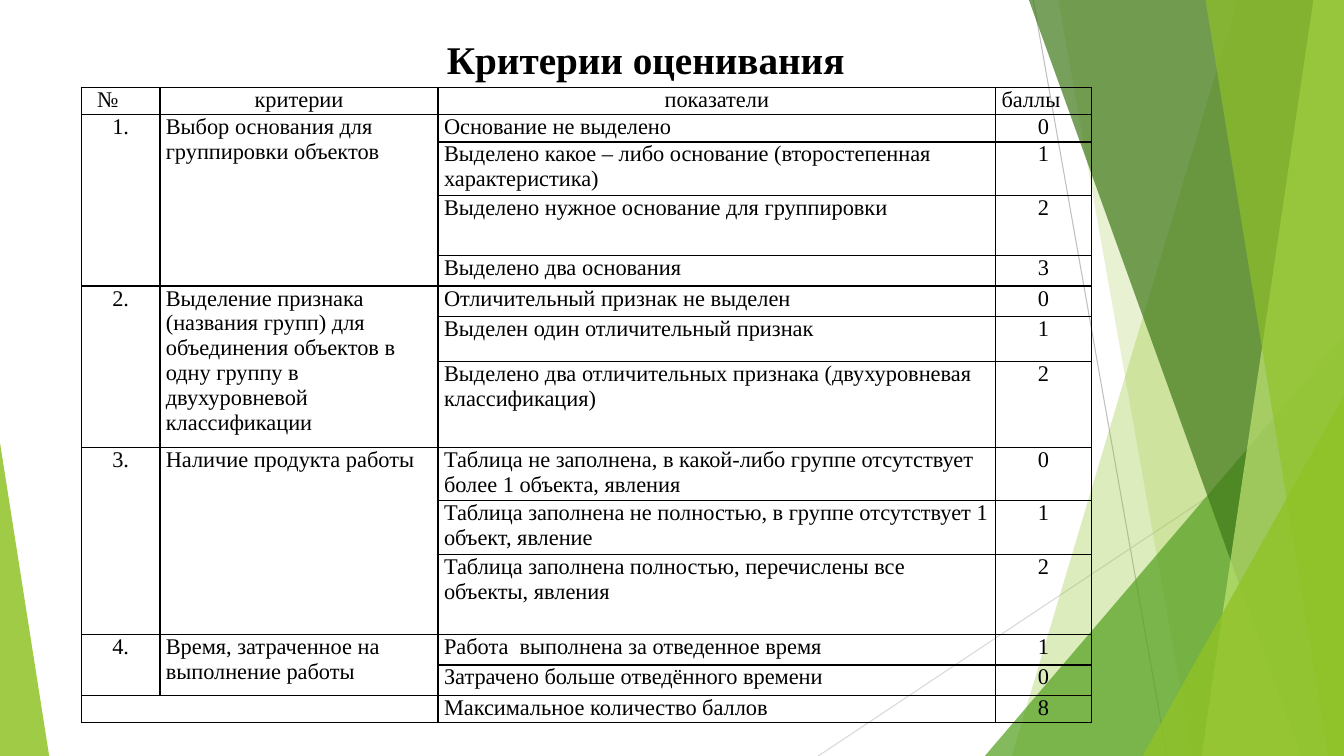
from lxml import etree
from pptx import Presentation
from pptx import util as u
from pptx.dml.color import RGBColor
from pptx.enum import shapes, text
from pptx.oxml.ns import qn

# Content
TITLE = "Критерии оценивания"
HEADERS = ["№", "критерии", "показатели", "баллы"]
# Criterion, then its indicators: wording, points, row height in cm
CRITERIA = [
    ("Выбор основания для группировки объектов", [
        ("Основание не выделено", 0, 0.69),
        ("Выделено какое – либо основание (второстепенная характеристика)", 1, 1.35),
        ("Выделено нужное основание для группировки", 2, 1.52),
        ("Выделено два основания", 3, 0.76),
    ]),
    ("Выделение признака  (названия групп) для объединения объектов в одну "
     "группу в двухуровневой классификации", [
        ("Отличительный признак не выделен", 0, 0.76),
        ("Выделен один отличительный признак", 1, 1.14),
        ("Выделено два отличительных признака (двухуровневая классификация)", 2, 2.16),
    ]),
    ("Наличие продукта работы", [
        ("Таблица не заполнена, в какой-либо группе отсутствует более 1 объекта, явления", 0, 1.35),
        ("Таблица заполнена не полностью, в группе отсутствует 1 объект, явление", 1, 1.35),
        ("Таблица заполнена полностью, перечислены все объекты, явления", 2, 2.03),
    ]),
    ("Время, затраченное на выполнение работы", [
        ("Работа  выполнена за отведенное время", 1, 0.76),
        ("Затрачено больше отведённого времени", 0, 0.76),
    ]),
]
TOTAL = ("Максимальное количество баллов", 8)

# Look
FONT = "Times New Roman"
BLACK = RGBColor(0x00, 0x00, 0x00)
GREEN = RGBColor(0x90, 0xC2, 0x26)
LEAF = RGBColor(0x54, 0xA0, 0x21)
FOREST = RGBColor(0x3F, 0x78, 0x19)
LIME = RGBColor(0xC0, 0xE4, 0x74)
GREY = RGBColor(0xBF, 0xBF, 0xBF)
PALE = RGBColor(0xD9, 0xD9, 0xD9)

# Geometry in cm
WIDTH, HEIGHT = 33.87, 19.05
COLUMNS = [1.98, 7.01, 14.05, 2.41]
PLAIN_ROW = 0.69
RAYS = [((26.04, 0), (29.41, HEIGHT), GREY), ((WIDTH, 10.24), (20.62, HEIGHT), PALE)]
# Back to front: a panel has its left edge's top and bottom x,
# a triangle has its box and the place of its apex
DECOR = [
    ("panel", (31.19, 25.5), GREEN, 30),
    ("panel", (26.67, 30.05), GREEN, 20),
    ("triangle", (24.82, 8.46, 9.05, 10.59, 1), LEAF, 72),
    ("panel", (25.93, 32.79), FOREST, 70),
    ("panel", (33.1, 30.28), LIME, 70),
    ("panel", (30.38, 33.48), GREEN, 65),
    ("triangle", (28.8, 9.98, 5.07, 9.07, 1), GREEN, 80),
    ("triangle", (0, 11.15, 1.24, 7.9, 0), GREEN, 85),
]


def add_ray(page, start, end, color):
    ray = page.shapes.add_connector(
        shapes.MSO_CONNECTOR.STRAIGHT, *(u.Cm(v) for v in start + end))
    ray.line.color.rgb = color
    ray.line.width = u.Pt(0.75)
    etree.SubElement(ray._element.spPr, qn("a:effectLst"))


def add_decor(page, kind, place, color, opacity):
    if kind == "panel":
        top, bottom = place
        builder = page.shapes.build_freeform(u.Cm(top), 0)
        builder.add_line_segments(
            [(u.Cm(x), u.Cm(y)) for x, y in
             [(WIDTH, 0), (WIDTH, HEIGHT), (bottom, HEIGHT)]], close=True)
        shape = builder.convert_to_shape()
    else:
        *box, apex = place
        shape = page.shapes.add_shape(
            shapes.MSO_SHAPE.ISOSCELES_TRIANGLE, *(u.Cm(v) for v in box))
        shape.adjustments[0] = apex
    shape.shadow.inherit = False
    shape.line.fill.background()
    shape.fill.solid()
    shape.fill.fore_color.rgb = color
    tint = shape.fill._xPr.find(qn("a:solidFill"))[0]
    etree.SubElement(tint, qn("a:alpha"), val=str(opacity * 1000))


def set_font(para, size, bold=False):
    para.font.name = FONT
    para.font.size = u.Pt(size)
    para.font.bold = bold
    para.font.color.rgb = BLACK


def format_cell(cell):
    cell.margin_left = cell.margin_right = u.Cm(0.15)
    cell.margin_top = cell.margin_bottom = 0
    properties = cell._tc.get_or_add_tcPr()
    for side in ("lnL", "lnR", "lnT", "lnB"):
        border = etree.SubElement(properties, qn("a:" + side), w=str(u.Pt(1)))
        fill = etree.SubElement(border, qn("a:solidFill"))
        etree.SubElement(fill, qn("a:srgbClr"), val=str(BLACK))
    cell.fill.background()
    set_font(cell.text_frame.paragraphs[0], 16)


def write(cell, wording, centered=False):
    para = cell.text_frame.paragraphs[0]
    para.add_run().text = str(wording)
    if centered:
        para.alignment = text.PP_ALIGN.CENTER


def add_criteria_table(page):
    heights = [PLAIN_ROW]
    heights += [height for _, indicators in CRITERIA for _, _, height in indicators]
    heights.append(PLAIN_ROW)
    frame = page.shapes.add_table(
        len(heights), len(COLUMNS), u.Cm(2.05), u.Cm(2.2),
        u.Cm(sum(COLUMNS)), u.Cm(sum(heights)))
    table = frame.table
    table.first_row = table.horz_banding = False
    for column, width in zip(table.columns, COLUMNS):
        column.width = u.Cm(width)
    for row, height in zip(table.rows, heights):
        row.height = u.Cm(height)
    for cell in table.iter_cells():
        format_cell(cell)

    # Header row
    for index, header in enumerate(HEADERS):
        write(table.cell(0, index), header, centered=index in (1, 2))
    number_para = table.cell(0, 0).text_frame.paragraphs[0]
    number_para._p.get_or_add_pPr().set("indent", str(u.Cm(0.25)))

    # Criteria, each spanning its indicators
    first = 1
    for number, (criterion, indicators) in enumerate(CRITERIA, 1):
        last = first + len(indicators) - 1
        for column in (0, 1):
            table.cell(first, column).merge(table.cell(last, column))
        write(table.cell(first, 0), f"{number}.", centered=True)
        write(table.cell(first, 1), criterion)
        for row, (indicator, points, _) in enumerate(indicators, first):
            write(table.cell(row, 2), indicator)
            write(table.cell(row, 3), points, centered=True)
        first = last + 1

    # Total row
    table.cell(first, 0).merge(table.cell(first, 1))
    write(table.cell(first, 2), TOTAL[0])
    write(table.cell(first, 3), TOTAL[1], centered=True)


def main():
    deck = Presentation()
    deck.slide_width, deck.slide_height = u.Cm(WIDTH), u.Cm(HEIGHT)
    page = deck.slides.add_slide(deck.slide_layouts[5])

    # Background decoration
    for ray in RAYS:
        add_ray(page, *ray)
    for item in DECOR:
        add_decor(page, *item)

    # Title
    title = page.shapes.title
    title.left, title.top = u.Cm(8.23), u.Cm(0.76)
    title.width, title.height = u.Cm(16.08), u.Cm(1.45)
    title.text_frame.text = TITLE
    title.text_frame.vertical_anchor = text.MSO_ANCHOR.TOP
    para = title.text_frame.paragraphs[0]
    para.alignment = text.PP_ALIGN.CENTER
    set_font(para, 28, bold=True)

    add_criteria_table(page)
    deck.save("out.pptx")


if __name__ == "__main__":
    main()
